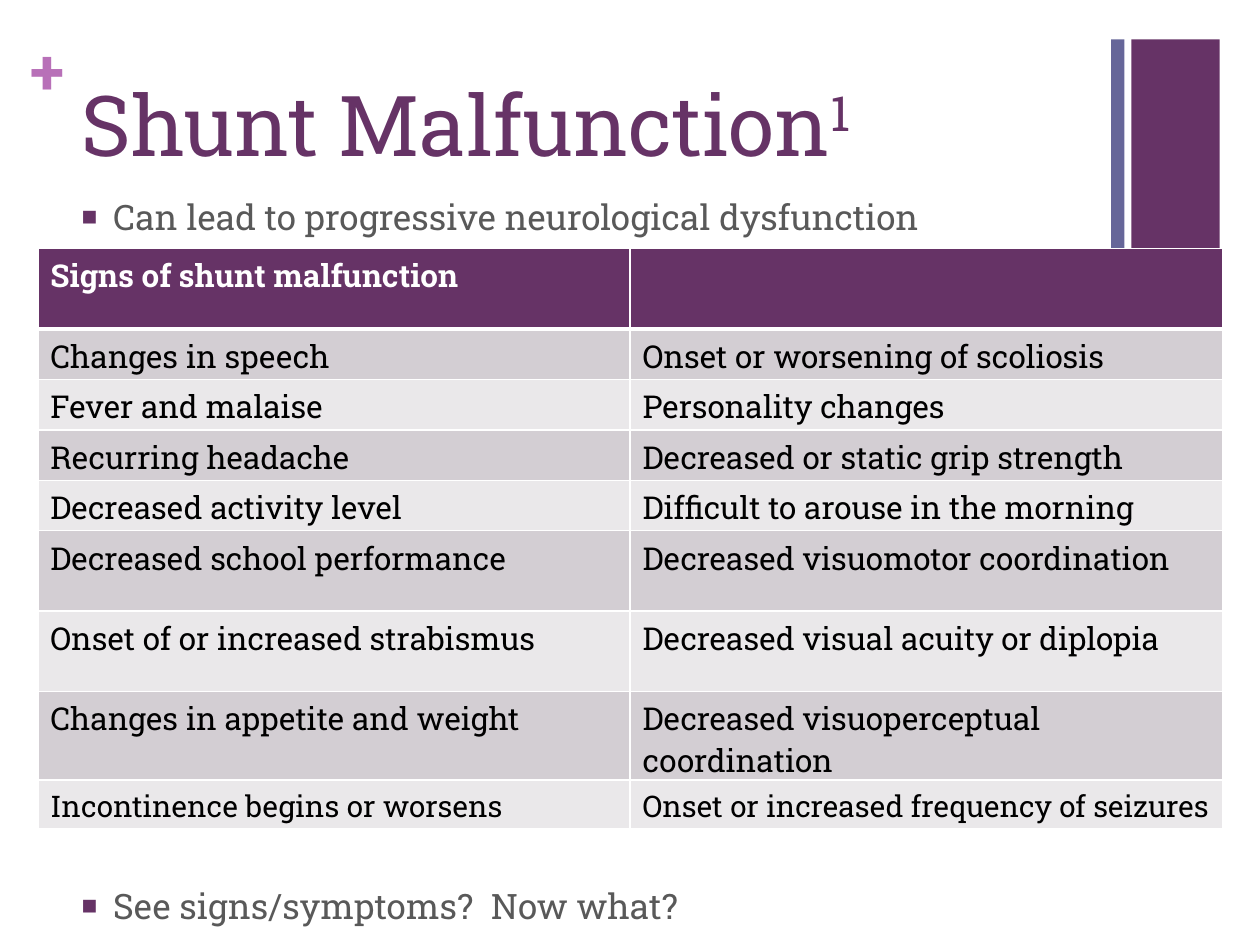
import pptx
import pptx.dml.color
import pptx.enum.shapes
import pptx.enum.text
import pptx.oxml
import pptx.oxml.ns
import pptx.util

Pt = pptx.util.Pt
RGBColor = pptx.dml.color.RGBColor
FONT = "Roboto Slab"
PURPLE = RGBColor(0x66, 0x33, 0x66)
BLUE = RGBColor(0x66, 0x66, 0x99)
ORCHID = RGBColor(0xB8, 0x70, 0xB8)
GREY = RGBColor(0x59, 0x59, 0x59)
BLACK = RGBColor(0, 0, 0)
WHITE = RGBColor(0xFF, 0xFF, 0xFF)
BANDS = [RGBColor(0xEA, 0xE8, 0xEA), RGBColor(0xD3, 0xCE, 0xD3)]


def format_runs(p, size, color, bold=False):
    for r in p.runs:
        r.font.name = FONT
        r.font.size = Pt(size)
        r.font.bold = bold
        r.font.color.rgb = color


def add_xml(parent, xml):
    ns = pptx.oxml.ns.nsdecls("a")
    parent.append(pptx.oxml.parse_xml(xml.replace(" ", f" {ns} ", 1)))


prs = pptx.Presentation()
prs.slide_width, prs.slide_height = Pt(720), Pt(540)
s = prs.slides.add_slide(prs.slide_layouts[1])

# Corner bars
for left, width, color in [(646.5, 50.5, PURPLE), (635, 7.5, BLUE)]:
    sp = s.shapes.add_shape(pptx.enum.shapes.MSO_SHAPE.RECTANGLE,
                            Pt(left), Pt(22.5), Pt(width), Pt(126))
    sp.shadow.inherit = False
    sp.fill.solid()
    sp.fill.fore_color.rgb = color
    sp.line.fill.background()

# Plus sign
tf = s.shapes.add_textbox(Pt(17.5), Pt(18), Pt(21), Pt(44)).text_frame
tf.margin_left = tf.margin_top = tf.margin_right = tf.margin_bottom = 0
tf.word_wrap = True
tf.text = "+"
format_runs(tf.paragraphs[0], 36, ORCHID, True)

# Title and body placeholders
title, body = s.shapes.title, s.placeholders[1]
for sp, top, height in [(title, 38, 88), (body, 108, 412.5)]:
    sp.left, sp.top, sp.width, sp.height = Pt(39.5), Pt(top), Pt(595), Pt(height)
    sp.text_frame.auto_size = pptx.enum.text.MSO_AUTO_SIZE.NONE
    sp.text_frame.vertical_anchor = pptx.enum.text.MSO_ANCHOR.TOP

p = title.text_frame.paragraphs[0]
p.alignment = pptx.enum.text.PP_ALIGN.LEFT
for text in ("Shunt Malfunction", "1"):
    p.add_run().text = text
format_runs(p, 48, PURPLE)
p.runs[1].font._element.set("baseline", "30000")

# Bullets above and below the table
tf = body.text_frame
tf.text = "Can lead to progressive neurological dysfunction\nSee signs/symptoms?  Now what?"
for p, gap in zip(tf.paragraphs, (0, 370)):
    p.space_before = Pt(gap)
    format_runs(p, 20, GREY)
    pPr = p._p.get_or_add_pPr()
    pPr.set("marL", str(Pt(18)))
    pPr.set("indent", str(-Pt(18)))
    add_xml(pPr, f'<a:buClr ><a:srgbClr val="{PURPLE}"/></a:buClr>')
    add_xml(pPr, '<a:buSzPct val="75000"/>')
    add_xml(pPr, '<a:buChar char="■"/>')

# Table of signs
rows = [
    ("Signs of shunt malfunction", "", 46),
    ("Changes in speech", "Onset or worsening of scoliosis", 26.7),
    ("Fever and malaise", "Personality changes", 26.7),
    ("Recurring headache", "Decreased or static grip strength", 26.7),
    ("Decreased activity level", "Difficult to arouse in the morning", 26.7),
    ("Decreased school performance", "Decreased visuomotor coordination", 46),
    ("Onset of or increased strabismus", "Decreased visual acuity or diplopia", 46),
    ("Changes in appetite and weight", "Decreased visuoperceptual coordination", 46),
    ("Incontinence begins or worsens", "Onset or increased frequency of seizures", 26.7),
]
table = s.shapes.add_table(len(rows), 2, Pt(21.6), Pt(142), Pt(677), Pt(317.5)).table
for i, (*texts, height) in enumerate(rows):
    header = i == 0
    size = 17 if i == len(rows) - 1 else 18
    table.rows[i].height = Pt(height)
    for j, text in enumerate(texts):
        cell = table.cell(i, j)
        cell.text = text
        format_runs(cell.text_frame.paragraphs[0], size, WHITE if header else BLACK, header)
        tcPr = cell._tc.get_or_add_tcPr()
        for side in "LRTB":
            thick = (header and side == "B") or (i == 1 and side == "T")
            add_xml(tcPr, f'<a:ln{side} w="{Pt(3 if thick else 1)}"><a:solidFill>'
                          f'<a:srgbClr val="{WHITE}"/></a:solidFill></a:ln{side}>')
        cell.fill.solid()
        cell.fill.fore_color.rgb = PURPLE if header else BANDS[i % 2]

prs.save("out.pptx")
